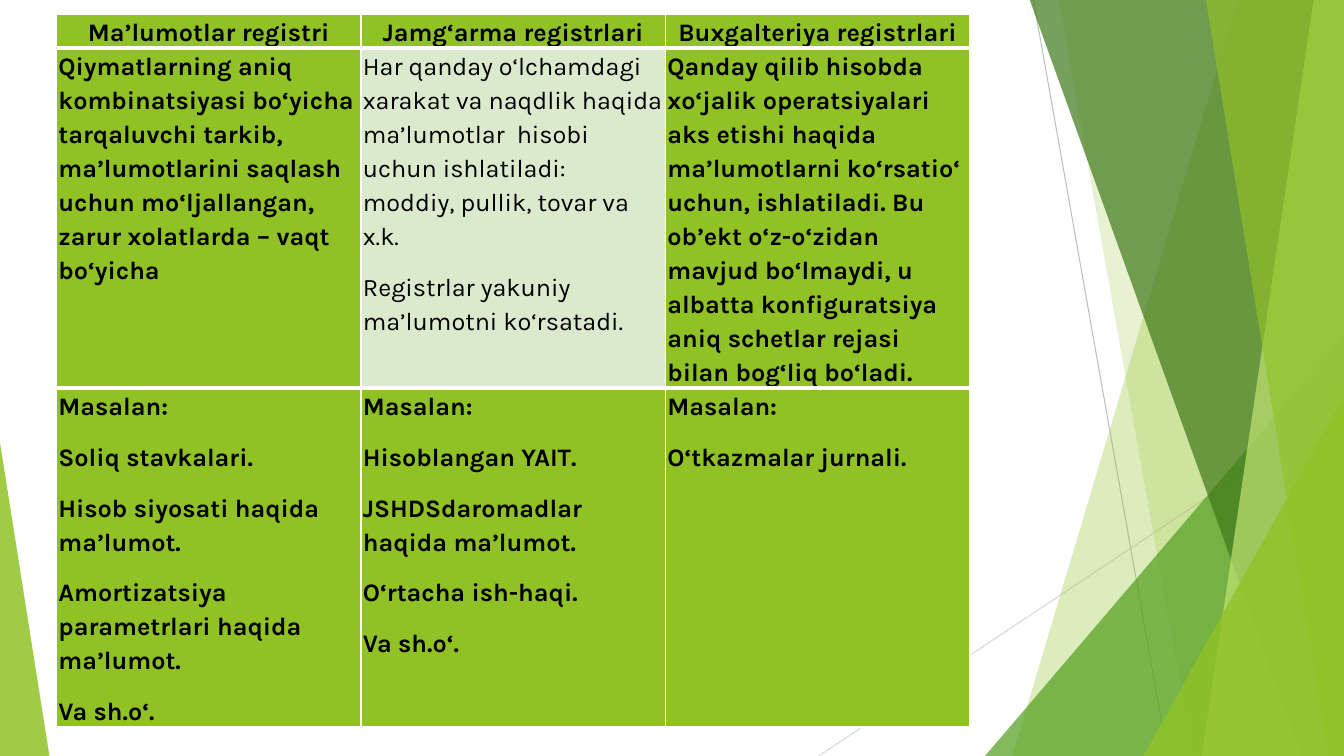
from typing import NamedTuple

from lxml import etree
from pptx import Presentation
from pptx import util as u
from pptx.dml.color import RGBColor
from pptx.enum import shapes, text
from pptx.oxml import ns

COLORS = {
    "lime": "90C226",
    "leaf": "54A021",
    "forest": "3F7819",
    "pale": "C0E474",
    "mist": "DBE9CD",
    "grey": "BFBFBF",
    "silver": "D9D9D9",
    "white": "FFFFFF",
    "ink": "000000",
}
WIDTH, HEIGHT = 13.33, 7.5
PANEL_TOP = -0.01


class Ray(NamedTuple):
    start: tuple[float, float]
    end: tuple[float, float]
    color: str


class Panel(NamedTuple):
    """Facet reaching the right edge, bounded on the left by a slanted side."""
    top_x: float
    bottom_x: float
    color: str
    opacity: int


class Wedge(NamedTuple):
    """Right triangle standing on the bottom edge."""
    left: float
    top: float
    width: float
    apex: float
    color: str
    opacity: int


class Entry(NamedTuple):
    paragraphs: list[str]
    fill: str = "lime"
    bold: bool = True


RAYS = [
    Ray((10.25, 0), (11.58, HEIGHT), "grey"),
    Ray((WIDTH, 4.03), (8.12, HEIGHT), "silver"),
]
FACETS = [
    Panel(12.28, 10.04, "lime", 30),
    Panel(10.5, 11.83, "lime", 20),
    Wedge(9.77, 3.33, 3.56, 1, "leaf", 72),
    Panel(10.21, 12.91, "forest", 70),
    Panel(13.03, 11.92, "pale", 70),
    Panel(11.96, 13.18, "lime", 65),
    Wedge(11.34, 3.93, 1.99, 1, "lime", 80),
    Wedge(0, 4.39, 0.49, 0, "lime", 85),
]

REGISTERS = [
    [
        Entry(["Ma’lumotlar registri"]),
        Entry(["Jamg‘arma registrlari"]),
        Entry(["Buxgalteriya registrlari"]),
    ],
    [
        Entry(["Qiymatlarning aniq kombinatsiyasi bo‘yicha tarqaluvchi tarkib, "
               "ma’lumotlarini saqlash uchun mo‘ljallangan, zarur xolatlarda – "
               "vaqt bo‘yicha"]),
        Entry(["Har qanday o‘lchamdagi xarakat va naqdlik haqida ma’lumotlar  hisobi "
               "uchun ishlatiladi: moddiy, pullik, tovar va x.k.",
               "Registrlar yakuniy ma’lumotni ko‘rsatadi."], "mist", False),
        Entry(["Qanday qilib hisobda xo‘jalik operatsiyalari aks etishi haqida "
               "ma’lumotlarni ko‘rsatio‘ uchun, ishlatiladi. Bu ob’ekt o‘z-o‘zidan "
               "mavjud bo‘lmaydi, u albatta konfiguratsiya aniq schetlar rejasi "
               "bilan bog‘liq bo‘ladi."]),
    ],
    [
        Entry(["Masalan:", "Soliq stavkalari.", "Hisob siyosati haqida ma’lumot.",
               "Amortizatsiya parametrlari haqida ma’lumot.", "Va sh.o‘."]),
        Entry(["Masalan:", "Hisoblangan YAIT.", "JSHDSdaromadlar haqida ma’lumot.",
               "O‘rtacha ish-haqi.", "Va sh.o‘."]),
        Entry(["Masalan:", "O‘tkazmalar jurnali."]),
    ],
]
COLUMN_WIDTH = 3.02
ROW_HEIGHTS = [0.3, 3.33, 3.01]

CELL_FORMAT = {
    "margin_left": u.Inches(0.02), "margin_right": u.Inches(0.02),
    "margin_top": 0, "margin_bottom": 0,
}
PARAGRAPH_FORMAT = {"line_spacing": 1.15, "space_before": u.Pt(6), "space_after": u.Pt(6)}
FONT_FORMAT = {"name": "Karla", "size": u.Pt(18)}


def rgb(color: str) -> RGBColor:
    return RGBColor.from_string(COLORS[color])


def apply(target, values: dict) -> None:
    for name, value in values.items():
        setattr(target, name, value)


def draw_ray(slide, ray: Ray) -> None:
    ends = [u.Inches(value) for value in ray.start + ray.end]
    line = slide.shapes.add_connector(shapes.MSO_CONNECTOR.STRAIGHT, *ends)
    line.line.color.rgb = rgb(ray.color)
    line.line.width = u.Pt(0.75)
    etree.SubElement(line._element.spPr, ns.qn("a:effectLst"))


def draw_facet(slide, facet: Panel | Wedge) -> None:
    if isinstance(facet, Panel):
        corners = [(u.Inches(x), u.Inches(y)) for x, y in (
            (facet.top_x, PANEL_TOP), (WIDTH, PANEL_TOP),
            (WIDTH, HEIGHT), (facet.bottom_x, HEIGHT))]
        builder = slide.shapes.build_freeform(*corners[0])
        builder.add_line_segments(corners[1:], close=True)
        shape = builder.convert_to_shape()
    else:
        shape = slide.shapes.add_shape(
            shapes.MSO_SHAPE.ISOSCELES_TRIANGLE, u.Inches(facet.left), u.Inches(facet.top),
            u.Inches(facet.width), u.Inches(HEIGHT - facet.top))
        shape.adjustments[0] = facet.apex
    shape.shadow.inherit = False
    shape.line.fill.background()
    shape.fill.solid()
    shape.fill.fore_color.rgb = rgb(facet.color)
    tint = shape._element.spPr.find(".//" + ns.qn("a:srgbClr"))
    etree.SubElement(tint, ns.qn("a:alpha"), val=str(facet.opacity * 1000))


def draw_borders(cell, widths: dict[str, int]) -> None:
    properties = cell._tc.get_or_add_tcPr()
    for side, width in widths.items():
        border = etree.SubElement(properties, ns.qn(f"a:ln{side}"), w=str(u.Pt(width)))
        fill = etree.SubElement(border, ns.qn("a:solidFill"))
        etree.SubElement(fill, ns.qn("a:srgbClr"), val=COLORS["white"])


def fill_cell(cell, entry: Entry, row: int) -> None:
    last = len(REGISTERS) - 1
    draw_borders(cell, {"L": 1, "R": 1, "T": 3 if row else 1, "B": 3 if row < last else 1})
    apply(cell, CELL_FORMAT)
    cell.fill.solid()
    cell.fill.fore_color.rgb = rgb(entry.fill)
    for index, wording in enumerate(entry.paragraphs):
        frame = cell.text_frame
        paragraph = frame.add_paragraph() if index else frame.paragraphs[0]
        apply(paragraph, PARAGRAPH_FORMAT)
        paragraph.alignment = text.PP_ALIGN.LEFT if row else text.PP_ALIGN.CENTER
        run = paragraph.add_run()
        run.text = wording
        apply(run.font, FONT_FORMAT | {"bold": entry.bold})
        run.font.color.rgb = rgb("ink")


def draw_registers(slide) -> None:
    columns = len(REGISTERS[0])
    table = slide.shapes.add_table(
        len(REGISTERS), columns, u.Inches(0.56), u.Inches(0.14),
        u.Inches(COLUMN_WIDTH * columns), u.Inches(sum(ROW_HEIGHTS))).table
    apply(table, {"first_row": False, "horz_banding": False})
    for column in table.columns:
        column.width = u.Inches(COLUMN_WIDTH)
    for row, entries in enumerate(REGISTERS):
        table.rows[row].height = u.Inches(ROW_HEIGHTS[row])
        for column, entry in enumerate(entries):
            fill_cell(table.cell(row, column), entry, row)


def main() -> None:
    deck = Presentation()
    apply(deck, {"slide_width": u.Inches(WIDTH), "slide_height": u.Inches(HEIGHT)})
    slide = deck.slides.add_slide(deck.slide_layouts[6])
    # Background facets
    for ray in RAYS:
        draw_ray(slide, ray)
    for facet in FACETS:
        draw_facet(slide, facet)
    # Comparison of registers
    draw_registers(slide)
    deck.save("out.pptx")


if __name__ == "__main__":
    main()
